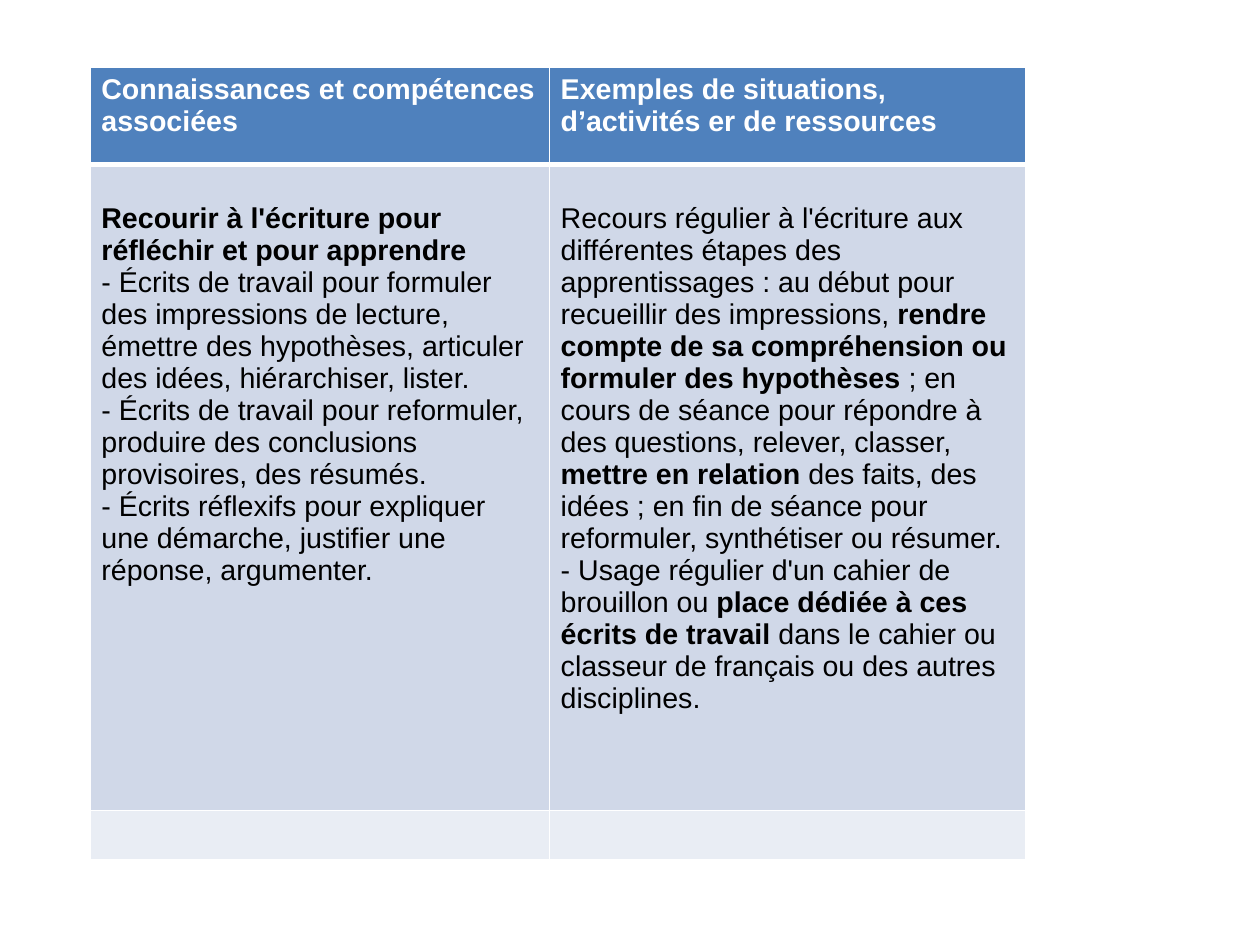
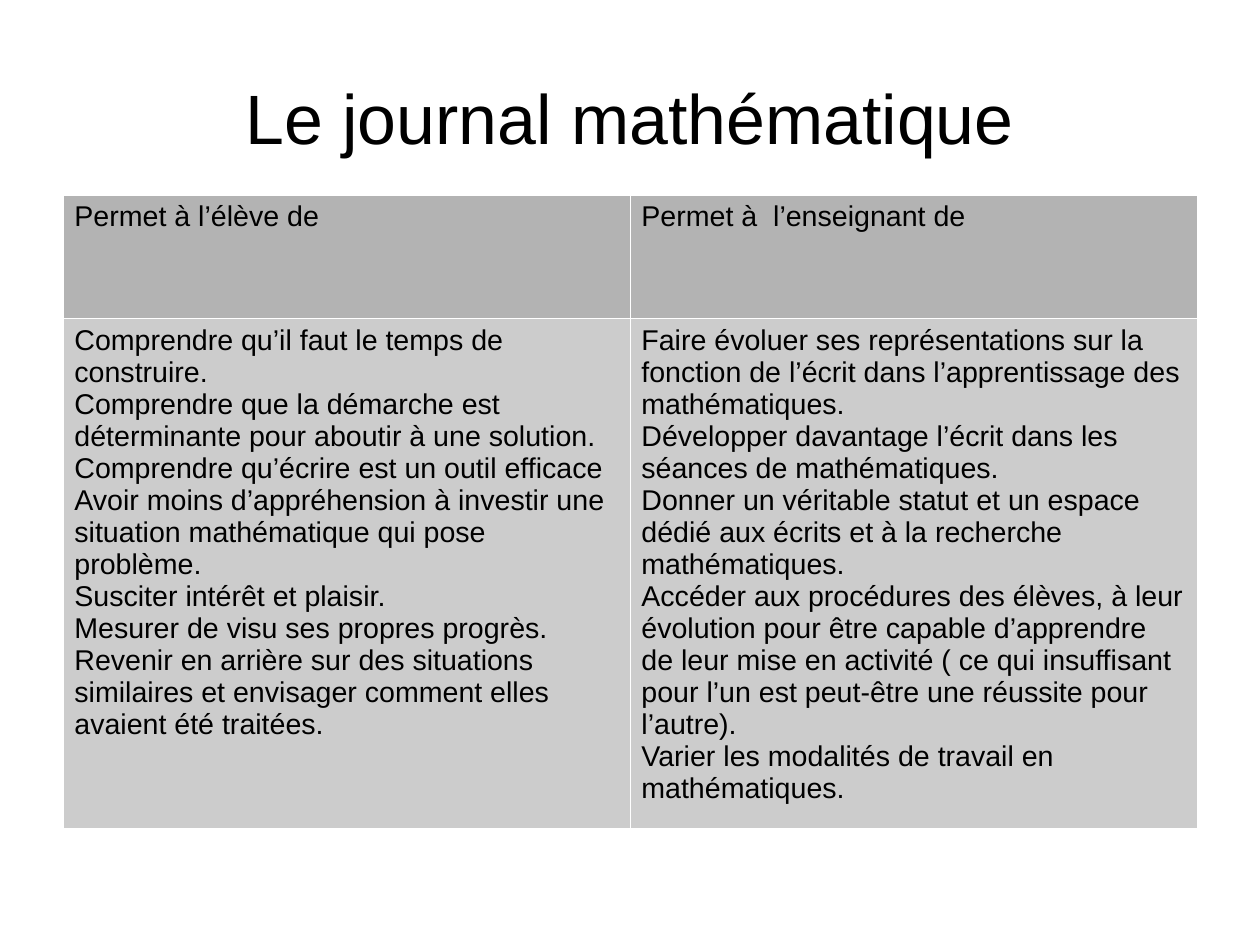
from dataclasses import dataclass

from lxml import etree
from pptx import Presentation
from pptx import util as u
from pptx.dml.color import RGBColor
from pptx.enum import text as t
from pptx.oxml import ns


@dataclass(frozen=True)
class Theme:
    """Hold the colours, font and sizes that the slides share."""
    font: str = "Arial"
    title_size: int = 44
    body_size: int = 18
    black: str = "000000"
    white: str = "FFFFFF"
    blues: tuple = ("4F81BD", "D0D8E8", "E9EDF4")
    greys: tuple = ("B3B3B3", "CCCCCC")


@dataclass(frozen=True)
class Box:
    """Describe a region in percent of the slide's size."""
    left: float
    top: float
    width: float
    height: float

    def place(self, presentation):
        """Return the region's left, top, width and height as lengths."""
        across, down = presentation.slide_width, presentation.slide_height
        shares = ((self.left, across), (self.top, down), (self.width, across), (self.height, down))
        return [round(share * whole / 100) for share, whole in shares]


@dataclass(frozen=True)
class TableStyle:
    """Describe row fills, header text, rules and the body's top margin."""
    fills: tuple
    header_color: str
    header_bold: bool
    rule: float
    header_rule: float
    body_top: float


THEME = Theme()
BLUE_TABLE = TableStyle(THEME.blues, THEME.white, True, 1, 3, 0.33)
GREY_TABLE = TableStyle(THEME.greys, THEME.black, False, 0.06, 0.06, 0.05)

SKILLS = [
    [["Connaissances et compétences associées"],
     ["Exemples de situations, d’activités er de ressources"]],
    [["**Recourir à l'écriture pour réfléchir et pour apprendre**",
      "- Écrits de travail pour formuler des impressions de lecture, émettre des hypothèses, "
      "articuler des idées, hiérarchiser, lister.",
      "- Écrits de travail pour reformuler, produire des conclusions provisoires, des résumés.",
      "- Écrits réflexifs pour expliquer une démarche, justifier une réponse, argumenter."],
     ["Recours régulier à l'écriture aux différentes étapes des apprentissages : au début pour "
      "recueillir des impressions, **rendre compte de sa compréhension ou formuler des "
      "hypothèses **; en cours de séance pour répondre à des questions, relever, classer, "
      "**mettre en relation **des faits, des idées ; en fin de séance pour reformuler, "
      "synthétiser ou résumer.",
      "- Usage régulier d'un cahier de brouillon ou **place dédiée à ces écrits de travail **"
      "dans le cahier ou classeur de français ou des autres disciplines."]],
    [[], []],
]

JOURNAL = [
    [["Permet à l’élève de"], ["Permet à  l’enseignant de"]],
    [["Comprendre qu’il faut le temps de construire.",
      "Comprendre que la démarche est déterminante pour aboutir à une solution.",
      "Comprendre qu’écrire est un outil efficace",
      "Avoir moins d’appréhension à investir une situation mathématique qui pose problème.",
      "Susciter intérêt et plaisir.",
      "Mesurer de visu ses propres progrès.",
      "Revenir en arrière sur des situations similaires et envisager comment elles avaient "
      "été traitées."],
     ["Faire évoluer ses représentations sur la fonction de l’écrit dans l’apprentissage des "
      "mathématiques.",
      "Développer davantage l’écrit dans les séances de mathématiques.",
      "Donner un véritable statut et un espace dédié aux écrits et à la recherche mathématiques.",
      "Accéder aux procédures des élèves, à leur évolution pour être capable d’apprendre de "
      "leur mise en activité ( ce qui insuffisant pour l’un est peut-être une réussite pour "
      "l’autre).",
      "Varier les modalités de travail en mathématiques."]],
]


def set_attributes(target, values):
    """Set each named attribute of the target."""
    for name, value in values.items():
        setattr(target, name, value)


def format_font(font, size, color, bold=False):
    """Apply the shared font with a size, colour and weight."""
    set_attributes(font, {"name": THEME.font, "size": u.Pt(size), "bold": bold})
    font.color.rgb = RGBColor.from_string(color)


def set_borders(cell, widths):
    """Draw white rules on the left, right, top and bottom of a cell."""
    properties = cell._tc.get_or_add_tcPr()
    for index, (side, width) in enumerate(zip("LRTB", widths)):
        line = etree.Element(ns.qn(f"a:ln{side}"), w=str(int(u.Pt(width))))
        fill = etree.SubElement(line, ns.qn("a:solidFill"))
        etree.SubElement(fill, ns.qn("a:srgbClr"), val=THEME.white)
        properties.insert(index, line)


def write_cell(cell, lines, color, bold):
    """Write paragraphs, with bold parts between double asterisks."""
    frame = cell.text_frame
    for number, line in enumerate(lines):
        paragraph = frame.add_paragraph() if number else frame.paragraphs[0]
        for index, part in enumerate(line.split("**")):
            if part:
                run = paragraph.add_run()
                run.text = part
                format_font(run.font, THEME.body_size, color, bold or index % 2 == 1)


def add_text_table(presentation, slide, box, content, columns, rows, style):
    """Fill a box with a table whose columns and rows share it by weight."""
    left, top, width, height = box.place(presentation)
    table = slide.shapes.add_table(len(rows), len(columns), left, top, width, height).table
    set_attributes(table, {"first_row": False, "horz_banding": False})
    for column, weight in zip(table.columns, columns):
        column.width = round(width * weight / sum(columns))
    for index, (row, weight) in enumerate(zip(table.rows, rows)):
        row.height = round(height * weight / sum(rows))
        header = index == 0
        above = style.header_rule if index == 1 else style.rule
        below = style.header_rule if header else style.rule
        for cell, lines in zip(row.cells, content[index]):
            cell.fill.solid()
            cell.fill.fore_color.rgb = RGBColor.from_string(style.fills[index])
            set_borders(cell, (style.rule, style.rule, above, below))
            if index == 1:
                cell.margin_top = u.Inches(style.body_top)
            write_cell(cell, lines, style.header_color if header else THEME.black,
                       header and style.header_bold)


def add_title(presentation, slide, box, wording):
    """Move the title placeholder into a box and format its wording."""
    title = slide.shapes.title
    set_attributes(title, dict(zip(("left", "top", "width", "height"), box.place(presentation))))
    frame = title.text_frame
    frame.text = wording
    set_attributes(frame, {
        "margin_left": 0, "margin_right": 0, "margin_top": 0, "margin_bottom": 0,
        "word_wrap": True, "auto_size": t.MSO_AUTO_SIZE.NONE,
        "vertical_anchor": t.MSO_ANCHOR.MIDDLE,
    })
    paragraph = frame.paragraphs[0]
    paragraph.alignment = t.PP_ALIGN.CENTER
    format_font(paragraph.runs[0].font, THEME.title_size, THEME.black)


def build_skills(presentation):
    """Build the slide of skills and example situations."""
    slide = presentation.slides.add_slide(presentation.slide_layouts.get_by_name("Blank"))
    add_text_table(presentation, slide, Box(7.14, 7.14, 74.28, 83.8), SKILLS,
                   (4.02, 4.17), (0.85, 5.65, 0.43), BLUE_TABLE)


def build_journal(presentation):
    """Build the slide on the mathematics journal."""
    slide = presentation.slides.add_slide(presentation.slide_layouts.get_by_name("Title Only"))
    add_title(presentation, slide, Box(5, 3.99, 90, 16.7), "Le journal mathématique")
    add_text_table(presentation, slide, Box(5, 20.65, 90, 66.95), JOURNAL,
                   (1, 1), (1.08, 4.46), GREY_TABLE)


def main():
    """Build and save the presentation."""
    presentation = Presentation()
    set_attributes(presentation, {"slide_width": u.Cm(28), "slide_height": u.Cm(21)})
    build_skills(presentation)
    build_journal(presentation)
    presentation.save("out.pptx")


if __name__ == "__main__":
    main()
